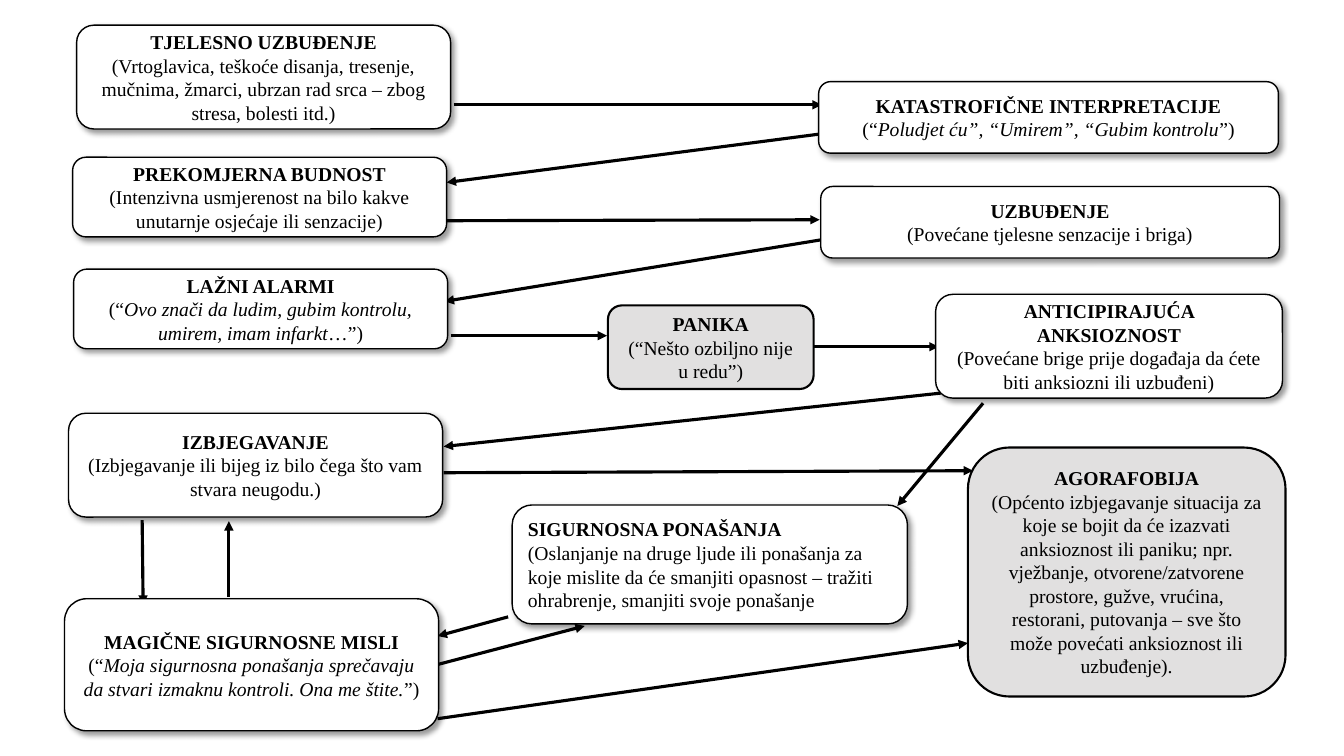
import pptx
import pptx.util
import pptx.dml.color
import pptx.enum.shapes
import pptx.enum.text
import pptx.oxml
import pptx.oxml.ns

RGB = pptx.dml.color.RGBColor
BLACK = RGB(0x00, 0x00, 0x00)
WHITE = RGB(0xFF, 0xFF, 0xFF)
GREY = RGB(0xE1, 0xE0, 0xE0)
ALIGN = pptx.enum.text.PP_ALIGN
FONT = "Times New Roman"
NS = pptx.oxml.ns.nsdecls("a")
CELL = 0.1  # one grid column or row, in inches

# Each box: left, top, width, height in cells; title; body runs (odd ones italic)
STEPS = [
    ((7.6, 2.5, 37.1, 10.3), "TJELESNO UZBUĐENJE",
     ["(Vrtoglavica, teškoće disanja, tresenje, mučnima, žmarci, ubrzan rad srca "
      "– zbog stresa, bolesti itd.)"]),
    ((81.2, 8.1, 45.6, 7.1), "KATASTROFIČNE INTERPRETACIJE",
     ["(“", "Poludjet ću”, “Umirem”, “Gubim kontrolu", "”)"]),
    ((7.2, 15.6, 37.1, 7.9), "PREKOMJERNA BUDNOST",
     ["(Intenzivna usmjerenost na bilo kakve unutarnje osjećaje ili senzacije)"]),
    ((81.4, 18.5, 45.5, 7.1), "UZBUĐENJE",
     ["(Povećane tjelesne senzacije i briga)"]),
    ((7.3, 26.7, 37.1, 7.9), "LAŽNI ALARMI",
     ["(“", "Ovo znači da ludim, gubim kontrolu, umirem, imam infarkt", "…”)"]),
    ((92.8, 29.2, 34.4, 10.3), "ANTICIPIRAJUĆA ANKSIOZNOST",
     ["(Povećane brige prije događaja da ćete biti anksiozni ili uzbuđeni)"]),
    ((6.8, 41, 37.1, 10.3), "IZBJEGAVANJE",
     ["(Izbjegavanje ili bijeg iz bilo čega što vam stvara neugodu.)"]),
    ((6.4, 59.4, 37.1, 13.1), "MAGIČNE SIGURNOSNE MISLI",
     ["(“", "Moja sigurnosna ponašanja sprečavaju da stvari izmaknu kontroli. "
      "Ona me štite.", "”)"]),
]
SAFETY = ((50.8, 50.1, 39.2, 11.8), "SIGURNOSNA PONAŠANJA",
          ["(Oslanjanje na druge ljude ili ponašanja za koje mislite da će smanjiti "
           "opasnost – tražiti ohrabrenje, smanjiti svoje ponašanje"])
RESULTS = [
    ((60.3, 30.3, 20.4, 8.3), "PANIKA", ["(“Nešto ozbiljno nije u redu”)"]),
    ((96, 44.4, 31.5, 24.7), "AGORAFOBIJA",
     ["(Općento izbjegavanje situacija za koje se bojit da će izazvati anksioznost "
      "ili paniku; npr. vježbanje, otvorene/zatvorene prostore, gužve, vrućina, "
      "restorani, putovanja – sve što može povećati anksioznost ili uzbuđenje)."]),
]
# Each arrow: start column and row, end column and row
ARROWS = [
    (45, 10.4, 81.5, 10.4), (81.3, 13.3, 44.3, 18.1),
    (44.2, 21.9, 81.3, 21.8), (81.4, 23.8, 44.1, 29.9),
    (44.7, 33.3, 60.2, 33.3), (80.7, 34.4, 93.1, 34.4),
    (93.3, 39, 44, 44.3), (44, 46.9, 96.5, 46.7),
    (97.5, 40, 89, 50.2), (14.1, 51.6, 14.2, 60),
    (50.4, 61.2, 43.4, 63.1), (22.7, 59.2, 22.7, 51.7),
    (43.5, 65.9, 58, 62.1), (43.4, 71.3, 96, 63.8),
]


def grid(*cells):
    """Turn grid counts into slide lengths."""
    return [pptx.util.Inches(n * CELL) for n in cells]


def write(para, text, size=14, bold=False, italic=False, color=BLACK):
    run = para.add_run()
    run.text = text
    font = run.font
    font.name, font.size = FONT, pptx.util.Pt(size)
    font.bold, font.italic = bold, italic
    font.color.rgb = color


def shade(shape):
    """Cast a soft shadow down and to the right."""
    effects = shape.element.spPr.find(pptx.oxml.ns.qn("a:effectLst"))
    effects.append(pptx.oxml.parse_xml(
        f'<a:outerShdw {NS} blurRad="50800" dist="38100" dir="2700000" algn="tl" '
        'rotWithShape="0"><a:srgbClr val="000000"><a:alpha val="40000"/>'
        '</a:srgbClr></a:outerShdw>'))


def box(slide, place, title, body, fill=WHITE, edge=1, align=ALIGN.CENTER):
    kind = pptx.enum.shapes.MSO_SHAPE.ROUNDED_RECTANGLE
    shape = slide.shapes.add_shape(kind, *grid(*place))
    shape.shadow.inherit = False
    shape.fill.solid()
    shape.fill.fore_color.rgb = fill
    shape.line.color.rgb = BLACK
    shape.line.width = pptx.util.Pt(edge)
    frame = shape.text_frame
    frame.word_wrap = True
    frame.vertical_anchor = pptx.enum.text.MSO_ANCHOR.MIDDLE
    head, para = frame.paragraphs[0], frame.add_paragraph()
    head.alignment = para.alignment = align
    write(head, title, bold=True)
    for i, part in enumerate(body):
        write(para, part, italic=i % 2 == 1)
    return shape


def arrow(slide, ends):
    kind = pptx.enum.shapes.MSO_CONNECTOR.STRAIGHT
    link = slide.shapes.add_connector(kind, *grid(*ends))
    link.line.color.rgb = BLACK
    link.line.width = pptx.util.Pt(2.25)
    props = link.element.spPr
    props.find(pptx.oxml.ns.qn("a:ln")).append(
        pptx.oxml.parse_xml(f'<a:tailEnd {NS} type="triangle"/>'))
    props.append(pptx.oxml.parse_xml(f"<a:effectLst {NS}/>"))


def main():
    deck = pptx.Presentation()
    deck.slide_width, deck.slide_height = grid(133.3, 75)
    slide = deck.slides.add_slide(deck.slide_layouts[6])
    for ends in ARROWS:
        arrow(slide, ends)
    for step in STEPS:
        shade(box(slide, *step))
    shade(box(slide, *SAFETY, align=ALIGN.LEFT))
    for result in RESULTS:
        box(slide, *result, fill=GREY, edge=1.5)
    deck.save("out.pptx")


if __name__ == "__main__":
    main()
